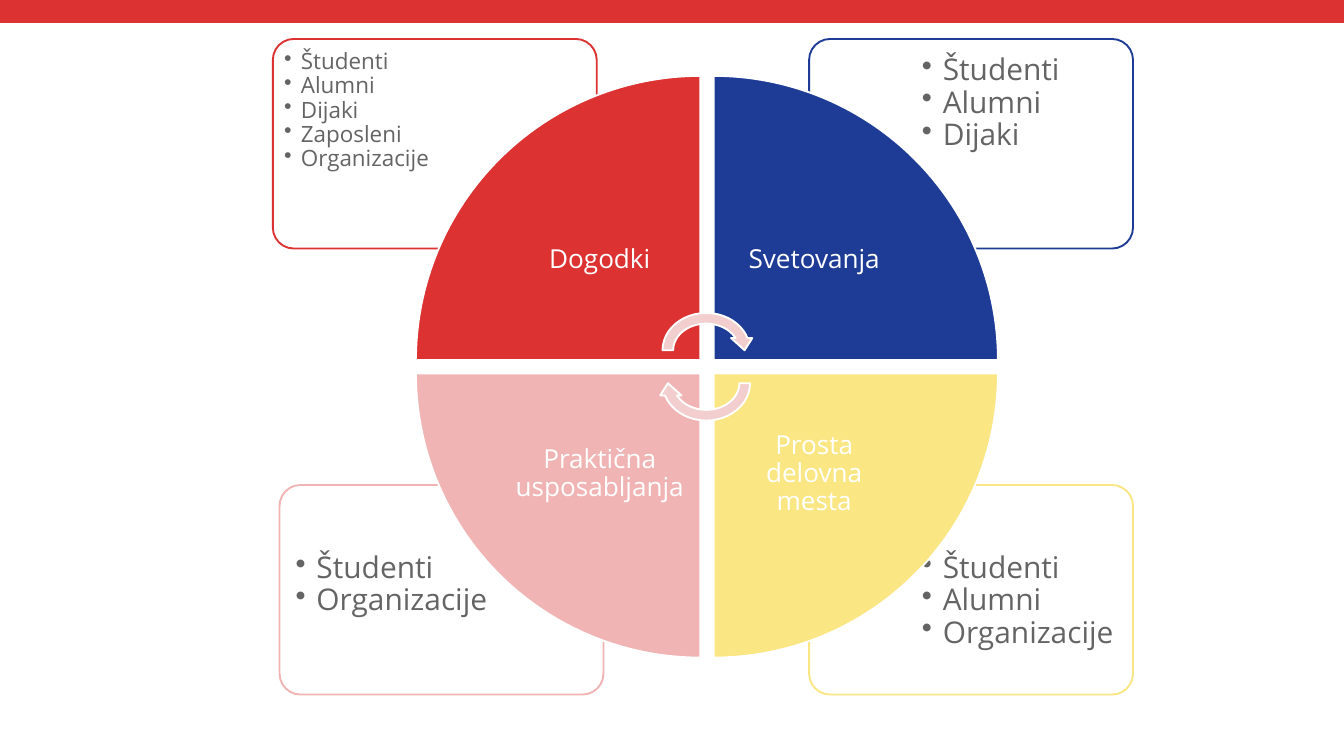
from lxml.etree import SubElement
from pptx import Presentation
from pptx.dml.color import RGBColor
from pptx.enum.shapes import MSO_SHAPE as Shape
from pptx.enum.text import MSO_ANCHOR as Anchor, PP_ALIGN as Align
from pptx.oxml.ns import qn
from pptx.util import Inches, Pt

FONT = "Open Sans"
RED, BLUE, YELLOW, PINK = "DC3232", "1E3C96", "FAE682", "F0B4B4"
PALE_PINK, WHITE, GREY = "F2CECE", "FFFFFF", "646464"

CARD_WIDTH, CARD_HEIGHT = 4.82, 3.12
LIST_WIDTH, LIST_HEIGHT, LIST_MARGIN = 3.24, 2.21, 0.07
RADIUS, LABEL_SIZE = 4.23, 2.99
WHEEL_LEFT, WHEEL_TOP, WHEEL_GAP = 6.19, 1.13, 0.2

# Title, colour, column, row, card left, list items, list size, inset, indent
QUADRANTS = [
    ("Prosta delovna mesta", YELLOW, 1, 1, 12.04,
     ["Študenti", "Alumni", "Organizacije"], 32, 0.17, 0.31),
    ("Praktična usposabljanja", PINK, 0, 1, 4.16,
     ["Študenti", "Organizacije"], 32, 0.17, 0.31),
    ("Svetovanja", BLUE, 1, 0, 12.04,
     ["Študenti", "Alumni", "Dijaki"], 32, 0.17, 0.31),
    ("Dogodki", RED, 0, 0, 4.06,
     ["Študenti", "Alumni", "Dijaki", "Zaposleni", "Organizacije"], 24, 0.1, 0.25),
]
CARD_TOPS = [0.58, 7.22]
ROTATIONS = {(0, 0): 0, (1, 0): 90, (1, 1): 180, (0, 1): 270}


def color(hex_string):
    return RGBColor.from_string(hex_string)


def add_shape(slide, kind, box, fill, line=None, rotation=0):
    shape = slide.shapes.add_shape(kind, *map(Inches, box))
    shape.shadow.inherit = False
    shape.rotation = rotation
    shape.fill.solid()
    shape.fill.fore_color.rgb = color(fill)
    if line:
        shape.line.color.rgb = color(line)
        shape.line.width = Pt(2)
    else:
        shape.line.fill.background()
    return shape


def add_text(slide, box, lines, size, text_color, inset, anchor, align, indent=0):
    frame = slide.shapes.add_textbox(*map(Inches, box)).text_frame
    frame.word_wrap = True
    frame.vertical_anchor = anchor
    frame.margin_left = frame.margin_right = Inches(inset)
    frame.margin_top = frame.margin_bottom = Inches(inset)
    for index, line in enumerate(lines):
        paragraph = frame.paragraphs[0] if index == 0 else frame.add_paragraph()
        paragraph.text = line
        paragraph.alignment = align
        paragraph.line_spacing = 0.9
        if indent:
            properties = paragraph._p.get_or_add_pPr()
            properties.set("marL", str(Inches(indent)))
            properties.set("indent", str(-Inches(indent)))
            SubElement(properties, qn("a:buChar")).set("char", "•")
        paragraph.font.name = FONT
        paragraph.font.size = Pt(size)
        paragraph.font.color.rgb = color(text_color)


def add_card(slide, box, line_color, column, row, items, size, inset, indent):
    """Rounded card with its list pushed to the outer corner."""
    left, top, width, height = box
    card = add_shape(slide, Shape.ROUNDED_RECTANGLE, box, WHITE, line_color)
    card.adjustments[0] = 0.1
    list_left = left + (width - LIST_WIDTH - LIST_MARGIN if column else LIST_MARGIN)
    list_top = top + (height - LIST_HEIGHT - LIST_MARGIN if row else LIST_MARGIN)
    add_text(slide, (list_left, list_top, LIST_WIDTH, LIST_HEIGHT), items, size,
             GREY, inset, Anchor.TOP, Align.LEFT, indent)


def add_wedge(slide, box, fill, column, row, title):
    """Quarter of the wheel with its label next to the centre."""
    left, top, width, height = box
    add_shape(slide, Shape.PIE_WEDGE, box, fill, WHITE, ROTATIONS[column, row])
    label_left = left if column else left + width - LABEL_SIZE
    label_top = top if row else top + height - LABEL_SIZE
    add_text(slide, (label_left, label_top, LABEL_SIZE, LABEL_SIZE), [title], 28,
             WHITE, 0.22, Anchor.MIDDLE, Align.CENTER)


def add_cycle_arrows(slide, left, top, width, height, step):
    for index in range(2):
        add_shape(slide, Shape.CIRCULAR_ARROW, (left, top + index * step, width, height),
                  PALE_PINK, WHITE, 180 * index)


def main():
    presentation = Presentation()
    presentation.slide_width = Inches(20)
    presentation.slide_height = Inches(11.24)
    slide = presentation.slides.add_slide(presentation.slide_layouts[6])

    # Top band
    add_shape(slide, Shape.RECTANGLE, (0, 0, 20, 0.34), RED)

    # Corner cards
    for _, fill, column, row, left, *list_details in QUADRANTS:
        box = (left, CARD_TOPS[row], CARD_WIDTH, CARD_HEIGHT)
        add_card(slide, box, fill, column, row, *list_details)

    # Wheel
    pitch = RADIUS + WHEEL_GAP
    for title, fill, column, row, *_ in QUADRANTS:
        box = (WHEEL_LEFT + column * pitch, WHEEL_TOP + row * pitch, RADIUS, RADIUS)
        add_wedge(slide, box, fill, column, row, title)
    add_cycle_arrows(slide, 9.78, 4.58, 1.46, 1.27, 0.49)

    presentation.save("out.pptx")


if __name__ == "__main__":
    main()
